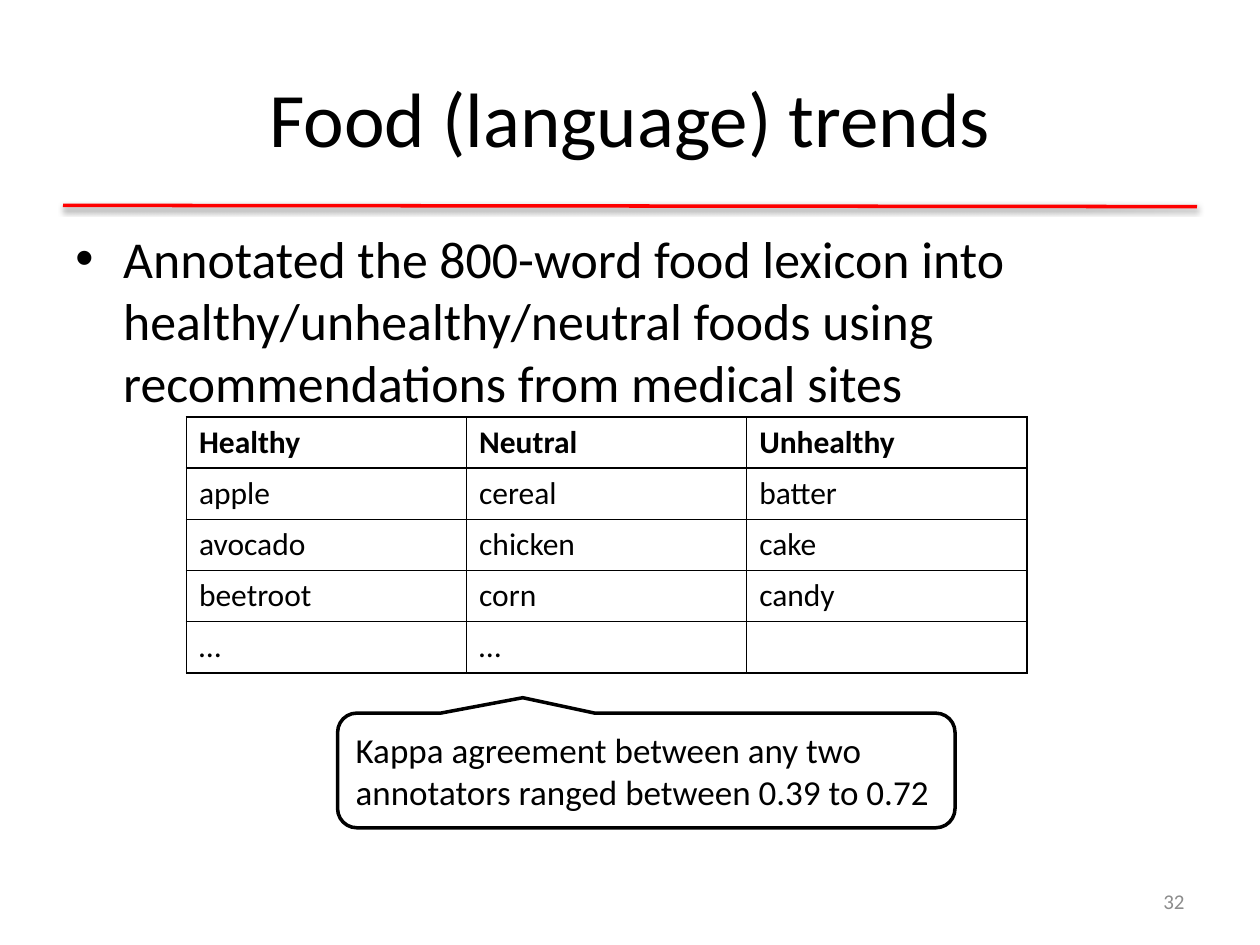
from lxml import etree
from pptx import Presentation
from pptx.dml.color import RGBColor
from pptx.enum import shapes, text
from pptx.oxml import ns
from pptx.util import Inches, Pt

COLORS = {"ink": "000000", "paper": "FFFFFF", "rule": "FF0000", "number": "8C8C8C"}
FONT = "Calibri"
FOODS = [
    ("Healthy", "Neutral", "Unhealthy"),
    ("apple", "cereal", "batter"),
    ("avocado", "chicken", "cake"),
    ("beetroot", "corn", "candy"),
    ("…", "…", ""),
]


def rgb(name):
    """Return the named colour."""
    return RGBColor.from_string(COLORS[name])


def add_xml(parent, tag, **attrs):
    """Append a DrawingML element and return it."""
    return etree.SubElement(parent, ns.qn(tag), {k: str(v) for k, v in attrs.items()})


def write(tf, content, size=18, color="ink", bold=False, align=text.PP_ALIGN.LEFT,
          anchor=None, bullet=None, indent=0):
    """Write one formatted paragraph into a text frame."""
    tf.word_wrap = True
    if anchor is not None:
        tf.vertical_anchor = anchor
    p = tf.paragraphs[0]
    p.alignment = align
    if bullet:
        pPr = p._p.get_or_add_pPr()
        pPr.set("marL", str(Inches(indent)))
        pPr.set("indent", str(-Inches(indent)))
        add_xml(pPr, "a:buFont", typeface="Arial")
        add_xml(pPr, "a:buChar", char=bullet)
    r = p.add_run()
    r.text = content
    r.font.name, r.font.size, r.font.bold = FONT, Pt(size), bold
    r.font.color.rgb = rgb(color)


def add_text(s, box, content, **style):
    """Add a wrapped text box."""
    write(s.shapes.add_textbox(*map(Inches, box)).text_frame, content, **style)


def add_rule(s, start, end):
    """Draw the red heading rule with its soft shadow."""
    line = s.shapes.add_connector(shapes.MSO_CONNECTOR.STRAIGHT,
                                  *map(Inches, start + end))
    line.line.color.rgb = rgb("rule")
    line.line.width = Pt(2)
    effects = add_xml(line._element.spPr, "a:effectLst")
    shadow = add_xml(effects, "a:outerShdw", blurRad=Pt(3.1), dist=Pt(1.6),
                     dir=90 * 60000, rotWithShape=0)
    color = add_xml(shadow, "a:srgbClr", val=COLORS["ink"])
    add_xml(color, "a:alpha", val=38000)


def add_borders(cell):
    """Give a cell thin borders on all four sides."""
    tcPr = cell._tc.get_or_add_tcPr()
    for i, side in enumerate(("a:lnL", "a:lnR", "a:lnT", "a:lnB")):
        ln = etree.Element(ns.qn(side), w=str(Pt(1)))
        add_xml(add_xml(ln, "a:solidFill"), "a:srgbClr", val=COLORS["ink"])
        tcPr.insert(i, ln)


def add_food_table(s, box):
    """Add the table of annotated foods with equal rows and columns."""
    frame = s.shapes.add_table(len(FOODS), len(FOODS[0]), *map(Inches, box))
    table = frame.table
    table.horz_banding = False
    for i, row in enumerate(FOODS):
        for j, food in enumerate(row):
            cell = table.cell(i, j)
            cell.fill.background()
            add_borders(cell)
            write(cell.text_frame, food, bold=i == 0)


def add_callout(s, box, content):
    """Add the rounded callout pointing up to the table."""
    sp = s.shapes.add_shape(shapes.MSO_SHAPE.ROUNDED_RECTANGULAR_CALLOUT,
                            *map(Inches, box))
    sp.shadow.inherit = False
    for i, value in enumerate((-0.2, -0.635, 0.167)):
        sp.adjustments[i] = value
    sp.fill.solid()
    sp.fill.fore_color.rgb = rgb("paper")
    sp.line.color.rgb = rgb("ink")
    sp.line.width = Pt(2)
    write(sp.text_frame, content, size=20, anchor=text.MSO_ANCHOR.MIDDLE)


def main():
    """Build and save the slide."""
    prs = Presentation()
    prs.slide_width, prs.slide_height = Inches(10), Inches(7.5)
    s = prs.slides.add_slide(prs.slide_layouts[6])
    middle = text.MSO_ANCHOR.MIDDLE
    add_rule(s, (0.5, 1.63), (9.5, 1.64))
    add_text(s, (0.5, 0.3, 9, 1.25), "Food (language) trends", size=44,
             align=text.PP_ALIGN.CENTER, anchor=middle)
    add_text(s, (0.5, 1.75, 9, 1.36),
             "Annotated the 800-word food lexicon into healthy/unhealthy/neutral "
             "foods using recommendations from medical sites",
             size=29.6, bullet="•", indent=0.38)
    add_text(s, (7.17, 6.95, 2.33, 0.4), "32", size=12, color="number",
             align=text.PP_ALIGN.RIGHT, anchor=middle)
    add_food_table(s, (1.48, 3.31, 6.67, 2.03))
    add_callout(s, (2.68, 5.66, 4.9, 0.91),
                "Kappa agreement between any two annotators ranged between 0.39 to 0.72")
    prs.save("out.pptx")


if __name__ == "__main__":
    main()
